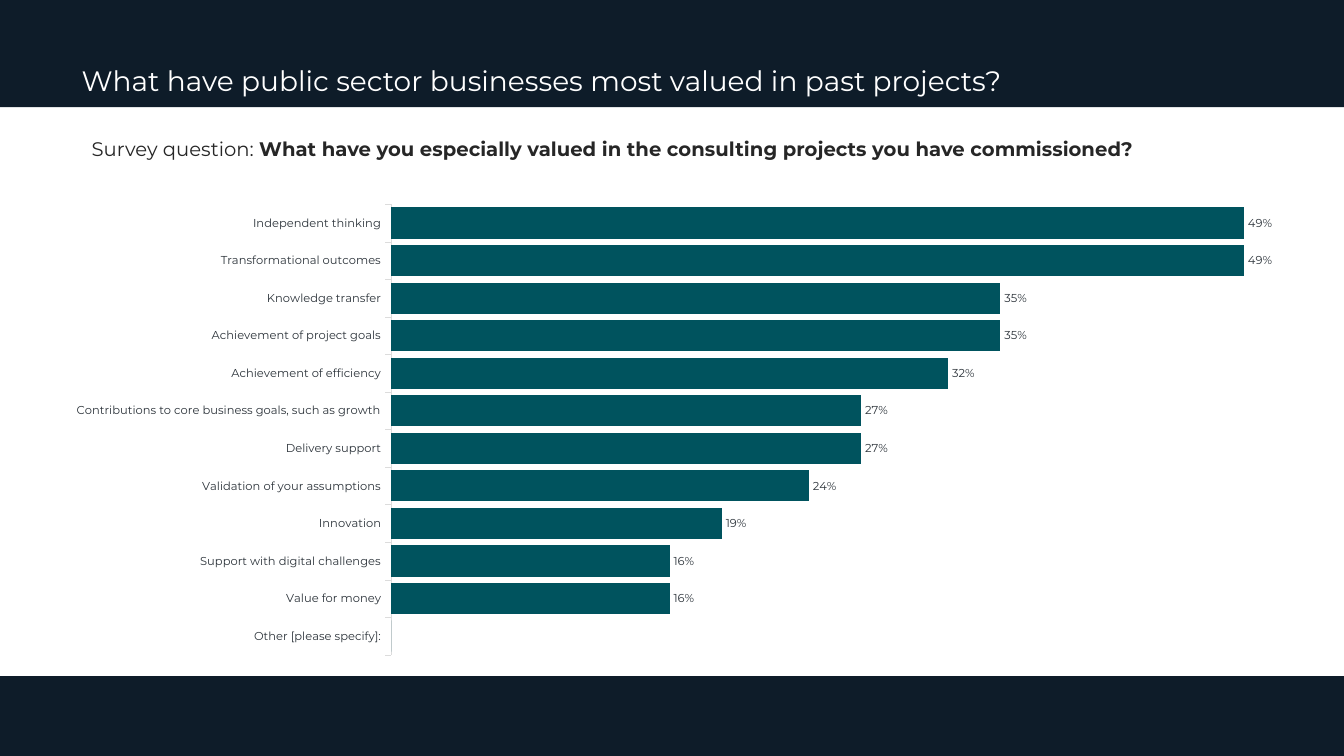
from dataclasses import dataclass

from lxml import etree
from pptx import Presentation
from pptx.chart.data import CategoryChartData
from pptx.dml.color import RGBColor
from pptx.enum.chart import XL_CHART_TYPE, XL_LABEL_POSITION, XL_TICK_MARK
from pptx.enum.shapes import MSO_SHAPE
from pptx.enum.text import MSO_ANCHOR, PP_ALIGN
from pptx.oxml.ns import qn
from pptx.util import Cm, Pt

BAR = XL_CHART_TYPE.BAR_CLUSTERED
OUT_END = XL_LABEL_POSITION.OUTSIDE_END
TICK_OUT, NO_TICK = XL_TICK_MARK.OUTSIDE, XL_TICK_MARK.NONE
RECT = MSO_SHAPE.RECTANGLE
TOP, LEFT = MSO_ANCHOR.TOP, PP_ALIGN.LEFT


@dataclass(frozen=True)
class Theme:
    font: str = "Montserrat"
    band: str = "0E1C29"
    white: str = "FFFFFF"
    text: str = "262626"
    label: str = "2C333A"
    axis: str = "DCDCDC"
    bar: str = "00535E"
    title_size: float = 20
    ask_size: float = 14
    chart_size: float = 8.2


THEME = Theme()
WIDTH, HEIGHT = 33.87, 19.05

# Survey answers, from the top bar down
ANSWERS = [
    ("Independent thinking", 0.49),
    ("Transformational outcomes", 0.49),
    ("Knowledge transfer", 0.35),
    ("Achievement of project goals", 0.35),
    ("Achievement of efficiency", 0.32),
    ("Contributions to core business goals, such as growth", 0.27),
    ("Delivery support", 0.27),
    ("Validation of your assumptions", 0.24),
    ("Innovation", 0.19),
    ("Support with digital challenges", 0.16),
    ("Value for money", 0.16),
    ("Other [please specify]:", 0),
]

# Plot area as shares of the chart frame
PLOT = {"x": 0.274, "y": 0.021, "w": 0.702, "h": 0.959}


def color(code):
    return RGBColor.from_string(code)


def style(font, size, code, bold=False):
    font.name = THEME.font
    font.size = Pt(size)
    font.bold = bold
    font.color.rgb = color(code)


def place(shape, left, top, width, height):
    shape.left, shape.top = Cm(left), Cm(top)
    shape.width, shape.height = Cm(width), Cm(height)


def add_band(slide, top, height):
    band = slide.shapes.add_shape(RECT, 0, Cm(top), Cm(WIDTH), Cm(height))
    band.shadow.inherit = False
    band.fill.solid()
    band.fill.fore_color.rgb = color(THEME.band)
    band.line.fill.background()


def write(shape, runs, size, code, spacing=1.0):
    frame = shape.text_frame
    frame.word_wrap = True
    frame.vertical_anchor = TOP
    para = frame.paragraphs[0]
    para.alignment = LEFT
    para.line_spacing = spacing
    para.space_before = Pt(0)
    for text, bold in runs:
        run = para.add_run()
        run.text = text
        style(run.font, size, code, bold)


def set_title(slide, text):
    title = slide.shapes.title
    place(title, 1.8, 1.57, 24.49, 1.42)
    write(title, [(text, False)], THEME.title_size, THEME.white, 0.9)
    # Bring the title in front of the bands
    title.element.getparent().append(title.element)


def add_ask(slide, runs):
    box = slide.shapes.add_textbox(Cm(2.06), Cm(3.33), Cm(29.31), Cm(0.86))
    write(box, runs, THEME.ask_size, THEME.text)


def fix_plot(chart):
    area = chart.element.find(".//" + qn("c:plotArea"))
    layout = area.find(qn("c:layout"))
    if layout is None:
        layout = etree.Element(qn("c:layout"))
        area.insert(0, layout)
    manual = etree.SubElement(layout, qn("c:manualLayout"))
    parts = [("layoutTarget", "inner"), ("xMode", "edge"), ("yMode", "edge")]
    for name, val in parts + list(PLOT.items()):
        etree.SubElement(manual, qn("c:" + name)).set("val", str(val))


def add_bars(slide):
    data = CategoryChartData(number_format="0%")
    names, vals = zip(*reversed(ANSWERS))
    data.categories = names
    data.add_series("Series 1", vals)
    frame = slide.shapes.add_chart(
        BAR, Cm(1.3), Cm(4.9), Cm(31.24), Cm(11.84), data)
    chart = frame.chart
    chart.has_legend = False
    chart.has_title = False
    style(chart.font, THEME.chart_size, THEME.label)
    fix_plot(chart)

    # Axes
    cats = chart.category_axis
    cats.major_tick_mark = TICK_OUT
    cats.minor_tick_mark = NO_TICK
    cats.has_major_gridlines = False
    cats.format.line.color.rgb = color(THEME.axis)
    cats.format.line.width = Pt(0.25)
    scale = chart.value_axis
    scale.minimum_scale, scale.maximum_scale = 0, 0.5
    scale.has_major_gridlines = False
    scale.visible = False

    # Bars and their labels; a zero bar has none
    plot = chart.plots[0]
    plot.gap_width = 20
    plot.vary_by_categories = False
    bars = plot.series[0]
    bars.format.fill.solid()
    bars.format.fill.fore_color.rgb = color(THEME.bar)
    labels = bars.data_labels
    labels.show_value = True
    labels.position = OUT_END
    labels.number_format = "0%;;"
    labels.number_format_is_linked = False
    style(labels.font, THEME.chart_size, THEME.label)


def main():
    deck = Presentation()
    deck.slide_width, deck.slide_height = Cm(WIDTH), Cm(HEIGHT)
    slide = deck.slides.add_slide(deck.slide_layouts[5])

    # Header and footer bands
    for top, height in [(17.04, 2.01), (0, 2.7)]:
        add_band(slide, top, height)

    # Heading and question
    set_title(
        slide, "What have public sector businesses most valued in past projects?")
    add_ask(slide, [
        ("Survey question: ", False),
        ("What have you especially valued in the consulting projects "
         "you have commissioned?", True),
    ])

    add_bars(slide)
    deck.save("out.pptx")


if __name__ == "__main__":
    main()
